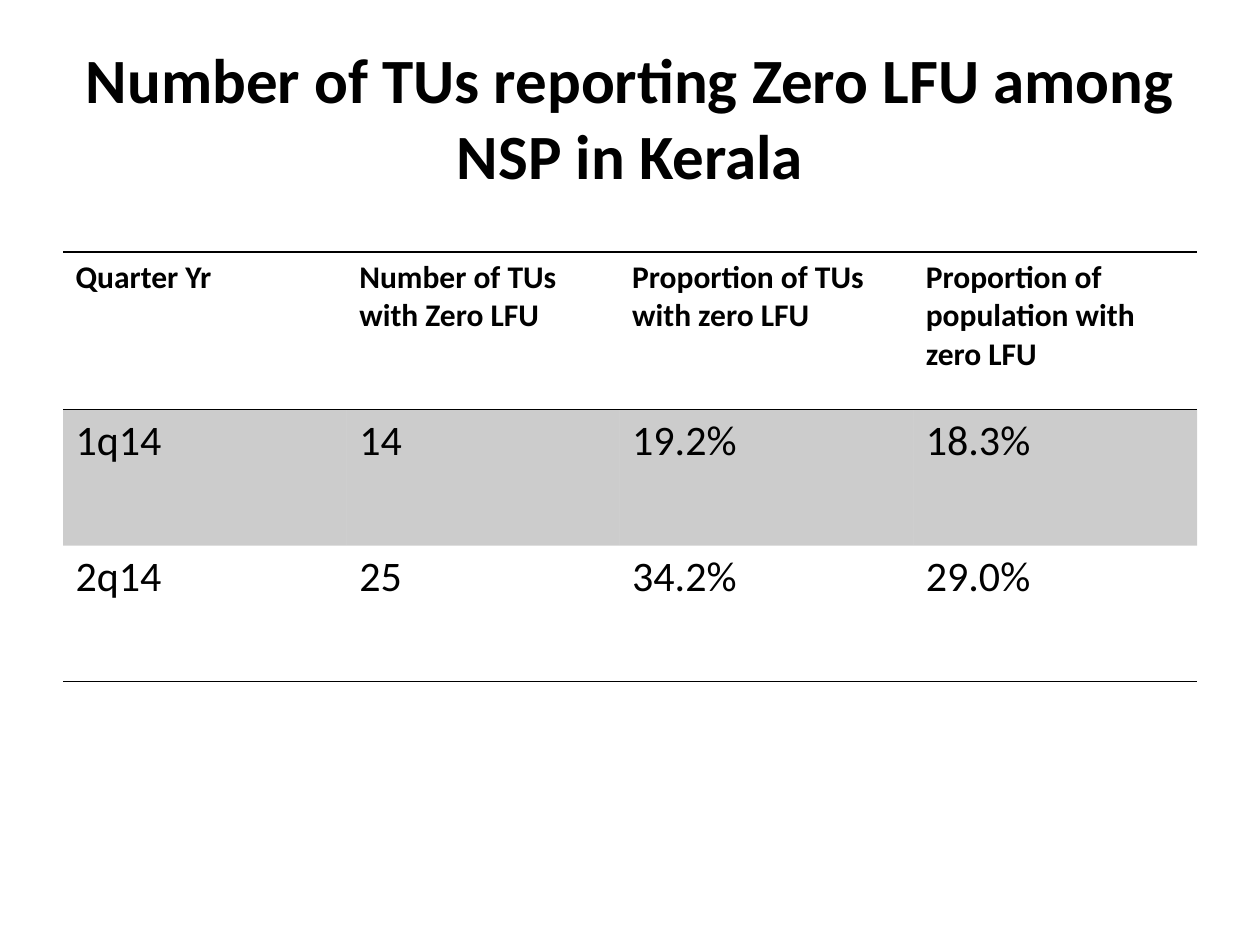
from dataclasses import dataclass
from lxml.etree import SubElement
from pptx import Presentation
from pptx.dml.color import RGBColor
from pptx.enum.text import MSO_ANCHOR, PP_ALIGN
from pptx.oxml import parse_xml
from pptx.oxml.ns import nsdecls, qn
from pptx.util import Cm, Pt


@dataclass(frozen=True)
class Theme:
    font: str = "Calibri"
    ink: str = "000000"
    shade: int = 20  # percent of ink in the shaded row
    title: int = 36
    head: int = 18
    body: int = 24
    rule: int = 1


theme = Theme()
ink = RGBColor.from_string(theme.ink)


def write(frame, text, size, bold=False, align=PP_ALIGN.LEFT):
    frame.word_wrap = True
    para = frame.paragraphs[0]
    para.alignment = align
    run = para.add_run()
    run.text = text
    run.font.name = theme.font
    run.font.size = Pt(size)
    run.font.bold = bold
    run.font.color.rgb = ink


def rule(cell, side):
    """Draw one border; side is T or B. Call top first, then bottom, then fill."""
    cell._tc.get_or_add_tcPr().append(parse_xml(
        f'<a:ln{side} {nsdecls("a")} w="{Pt(theme.rule)}"><a:solidFill>'
        f'<a:srgbClr val="{theme.ink}"/></a:solidFill></a:ln{side}>'))


deck = Presentation()
deck.slide_width, deck.slide_height = Cm(25.4), Cm(19.05)
slide = deck.slides.add_slide(deck.slide_layouts[6])
left, width = Cm(1.27), Cm(22.86)

title = slide.shapes.add_textbox(left, Cm(0.76), width, Cm(3.18)).text_frame
title.vertical_anchor = MSO_ANCHOR.MIDDLE
write(title, "Number of TUs reporting Zero LFU among NSP in Kerala",
      theme.title, bold=True, align=PP_ALIGN.CENTER)

rows = [
    ["Quarter Yr", "Number of TUs with Zero LFU",
     "Proportion of TUs with zero LFU", "Proportion of population with zero LFU"],
    ["1q14", "14", "19.2%", "18.3%"],
    ["2q14", "25", "34.2%", "29.0%"],
]
widths = [5.72, 5.5, 5.92, 5.72]
heights = [3.18, 2.74, 2.74]

table = slide.shapes.add_table(len(rows), len(widths), left, Cm(5.08),
                               width, Cm(sum(heights))).table
table.horz_banding = False
plain = "{2D5ABB26-0587-4C30-8999-92F81FD0307C}"  # No Style, No Grid
table._tbl.tblPr.find(qn("a:tableStyleId")).text = plain
for col, size in zip(table.columns, widths):
    col.width = Cm(size)

for r, (row, height) in enumerate(zip(rows, heights)):
    table.rows[r].height = Cm(height)
    head = r == 0
    for c, text in enumerate(row):
        cell = table.cell(r, c)
        write(cell.text_frame, text, theme.head if head else theme.body, bold=head)
        if head:
            rule(cell, "T")
        if head or r == len(rows) - 1:
            rule(cell, "B")
        if r % 2:
            cell.fill.solid()
            cell.fill.fore_color.rgb = ink
            tint = cell._tc.tcPr.find(qn("a:solidFill")).find(qn("a:srgbClr"))
            SubElement(tint, qn("a:alpha"), val=str(theme.shade * 1000))
        else:
            cell.fill.background()

deck.save("out.pptx")
